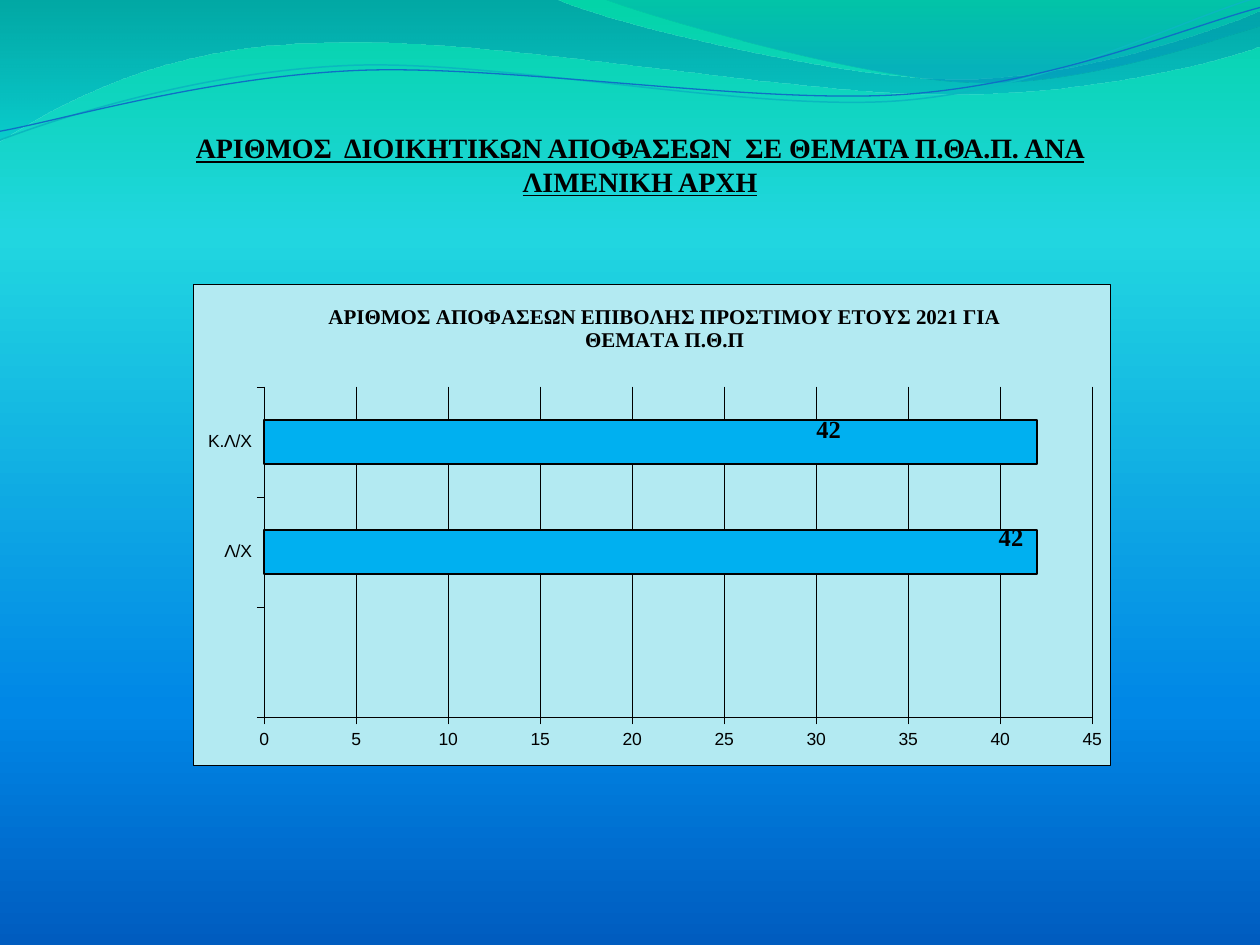
from math import cos, radians, sin

from lxml import etree
from pptx import Presentation
from pptx.chart.data import CategoryChartData
from pptx.dml.color import RGBColor
from pptx.enum import chart as ch, text
from pptx.oxml import parse_xml
from pptx.oxml.ns import nsdecls, qn
from pptx.util import Pt

BLACK = RGBColor(0, 0, 0)
BAR = RGBColor(0x00, 0xB0, 0xF0)
PANEL = RGBColor(0xB3, 0xEA, 0xF2)
TEAL = RGBColor(0x0A, 0xB8, 0xBF)
BLUE = RGBColor(0x0F, 0x6F, 0xC6)
SERIF = "Times New Roman"
TILT = -2.7

# Gradient stops: position %, colour, opacity %
SKY = [(0, RGBColor(0x03, 0xD4, 0xA8), 100), (25, RGBColor(0x21, 0xD6, 0xE0), 100),
       (75, RGBColor(0x00, 0x87, 0xE6), 100), (100, RGBColor(0x00, 0x5C, 0xBF), 100)]
DEEP = [(0, RGBColor(0x00, 0x74, 0xA1), 45), (100, RGBColor(0x00, 0xC6, 0xCF), 55)]
PALE = [(0, RGBColor(0x00, 0xA1, 0xA9), 30), (80, RGBColor(0x00, 0x8B, 0xBF), 45)]

# Outlines in points: a start, then line ends (2 numbers) or Bézier curves (6)
WIDE = [(0, -0.7), (317, -0.7), (343, 12, 478, 45, 546, 45.4),
        (614, 45.4, 690, 19, 720, 6.5), (720.7, 26),
        (708, 32, 626, 55, 537, 54), (448, 54, 275, 20, 185, 24.5),
        (93, 25, 33, 60, -0.7, 81)]
SIDE = [(345, -0.7), (366, 8, 491, 45, 554, 47),
        (616, 50, 692, 23, 720, 15), (720, 0)]
UPPER = [(0, 80), (34.6, 67, 113.8, 41, 199.4, 37.4),
         (284.4, 33.8, 427, 64, 513.4, 57.6), (600, 51, 675.4, 10.8, 718.6, -1.4)]
LOWER = [(0, 75), (34, 69, 118, 44, 204, 40.3),
         (290, 36.7, 430, 59.8, 516, 54), (602, 48, 679, 15, 720, 4.3)]


def shade(fill, root, stops):
    """Give a fill a top-to-bottom gradient; root is the element that holds it."""
    fill.gradient()
    fill.gradient_angle = 270
    gs = root.find(".//" + qn("a:gsLst"))
    for old in list(gs):
        gs.remove(old)
    for pos, color, alpha in stops:
        stop = etree.SubElement(gs, qn("a:gs"), pos=str(pos * 1000))
        rgb = etree.SubElement(stop, qn("a:srgbClr"), val=str(color))
        if alpha < 100:
            etree.SubElement(rgb, qn("a:alpha"), val=str(alpha * 1000))


def pairs(step):
    return list(zip(step[::2], step[1::2]))


def turn(steps, mid, angle):
    """Rotate an outline about a point."""
    c, s = cos(radians(angle)), sin(radians(angle))
    cx, cy = mid
    return [[v for x, y in pairs(step)
             for v in (cx + (x - cx) * c - (y - cy) * s,
                       cy + (x - cx) * s + (y - cy) * c)] for step in steps]


def outline(slide, steps, close):
    """Draw a freeform through the step ends, then bend its curved steps."""
    ends = [(Pt(s[-2]), Pt(s[-1])) for s in steps]
    pen = slide.shapes.build_freeform(*ends[0], scale=1.0)
    pen.add_line_segments(ends[1:], close=close)
    shape = pen.convert_to_shape()
    shape.shadow.inherit = False
    lines = shape.element.findall(".//" + qn("a:lnTo"))
    for line, step in zip(lines, steps[1:]):
        if len(step) == 6:
            bend = etree.Element(qn("a:cubicBezTo"))
            for x, y in pairs(step):
                etree.SubElement(bend, qn("a:pt"), x=str(Pt(x) - shape.left),
                                 y=str(Pt(y) - shape.top))
            line.getparent().replace(line, bend)
    return shape


def wave(slide, steps, stops):
    shape = outline(slide, steps, True)
    shade(shape.fill, shape.element, stops)
    shape.line.fill.background()


def curve(slide, steps, mid, color, width):
    shape = outline(slide, turn(steps, mid, -TILT), False)
    shape.rotation = TILT
    shape.fill.background()
    shape.line.color.rgb = color
    shape.line.width = Pt(width)


def style(font, size, name, bold=False):
    font.size, font.name, font.bold = Pt(size), name, bold
    font.color.rgb = BLACK


def heading(slide, words):
    box = slide.shapes.add_textbox(Pt(87.8), Pt(34), Pt(555.8), Pt(79))
    frame = box.text_frame
    frame.word_wrap = True
    frame.vertical_anchor = text.MSO_ANCHOR.BOTTOM
    frame.margin_left = frame.margin_right = frame.margin_bottom = 0
    frame.margin_top = Pt(3.6)
    frame.text = words
    para = frame.paragraphs[0]
    para.alignment = text.PP_ALIGN.CENTER
    font = para.runs[0].font
    style(font, 16, SERIF, True)
    font.underline = True


def place(parent, index, modes="", **sizes):
    """Give a chart part a manual layout."""
    for old in parent.findall(qn("c:layout")):
        parent.remove(old)
    vals = "".join(f'<c:{k} val="{v}"/>' for k, v in sizes.items())
    parent.insert(index, parse_xml(
        f'<c:layout {nsdecls("c")}><c:manualLayout>{modes}{vals}'
        '</c:manualLayout></c:layout>'))


def thin(line, width=0.25):
    line.color.rgb = BLACK
    line.width = Pt(width)


def panel(chart):
    """Fill and frame the chart area."""
    chart.element.find(qn("c:txPr")).addprevious(parse_xml(
        f'<c:spPr {nsdecls("c", "a")}><a:solidFill><a:srgbClr val="{PANEL}"/></a:solidFill>'
        f'<a:ln w="{Pt(0.25)}"><a:solidFill><a:srgbClr val="{BLACK}"/></a:solidFill></a:ln>'
        '</c:spPr>'))


def bars(slide, title, cats, vals, shifts):
    data = CategoryChartData()
    data.categories = cats
    data.add_series("Series 1", vals)
    chart = slide.shapes.add_chart(ch.XL_CHART_TYPE.BAR_CLUSTERED, Pt(110.5), Pt(162.4),
                                   Pt(524.2), Pt(275), data).chart
    style(chart.font, 10, "Arial")
    panel(chart)
    chart.has_legend = False
    edge = '<c:xMode val="edge"/><c:yMode val="edge"/>'
    chart.has_title = True
    frame = chart.chart_title.text_frame
    frame.text = title
    style(frame.paragraphs[0].runs[0].font, 12, SERIF, True)
    place(chart.element.find(".//" + qn("c:title")), 1, edge, x=0.143, y=0.033)
    place(chart.element.find(".//" + qn("c:plotArea")), 0,
          '<c:layoutTarget val="inner"/>' + edge, x=0.077, y=0.213, w=0.903, h=0.687)

    for axis in (chart.category_axis, chart.value_axis):
        axis.major_tick_mark = ch.XL_TICK_MARK.OUTSIDE
        axis.minor_tick_mark = ch.XL_TICK_MARK.NONE
        style(axis.tick_labels.font, 10, "Arial")
        thin(axis.format.line)
    chart.category_axis.tick_label_position = ch.XL_TICK_LABEL_POSITION.LOW
    scale = chart.value_axis
    scale.minimum_scale, scale.maximum_scale, scale.major_unit = 0, 45, 5
    thin(scale.major_gridlines.format.line)

    plot = chart.plots[0]
    plot.gap_width = 150
    plot.vary_by_categories = False
    row = plot.series[0]
    row.format.fill.solid()
    row.format.fill.fore_color.rgb = BAR
    thin(row.format.line, 1)
    tags = row.data_labels
    tags.show_value = True
    style(tags.font, 14, SERIF, True)
    for i in shifts:
        tag = row.points[i].data_label
        style(tag.font, 14, SERIF, True)
        tag.position = ch.XL_LABEL_POSITION.OUTSIDE_END
    root = chart.element
    for node, (x, y) in zip(root.findall(".//" + qn("c:dLbl")), shifts.values()):
        place(node, 1, x=x, y=y)
    for lead in root.findall(".//" + qn("c:showLeaderLines")):
        lead.set("val", "0")


def main():
    deck = Presentation()
    deck.slide_width, deck.slide_height = Pt(720), Pt(540)
    slide = deck.slides.add_slide(deck.slide_layouts[6])
    shade(slide.background.fill, slide.element, SKY)
    wave(slide, WIDE, DEEP)
    wave(slide, SIDE, PALE)
    curve(slide, UPPER, (359.3, 41.4), TEAL, 0.85)
    curve(slide, LOWER, (359.6, 42.5), BLUE, 0.75)
    heading(slide, "ΑΡΙΘΜΟΣ  ΔΙΟΙΚΗΤΙΚΩΝ ΑΠΟΦΑΣΕΩΝ  ΣΕ ΘΕΜΑΤΑ Π.ΘΑ.Π. ΑΝΑ ΛΙΜΕΝΙΚΗ ΑΡΧΗ")
    bars(slide, "ΑΡΙΘΜΟΣ ΑΠΟΦΑΣΕΩΝ ΕΠΙΒΟΛΗΣ ΠΡΟΣΤΙΜΟΥ ΕΤΟΥΣ 2021 ΓΙΑ ΘΕΜΑΤΑ Π.Θ.Π",
         ["", "Λ/Χ", "Κ.Λ/Χ"], [None, 42, 42], {1: (-0.047, -0.03), 2: (-0.246, -0.024)})
    deck.save("out.pptx")


if __name__ == "__main__":
    main()
